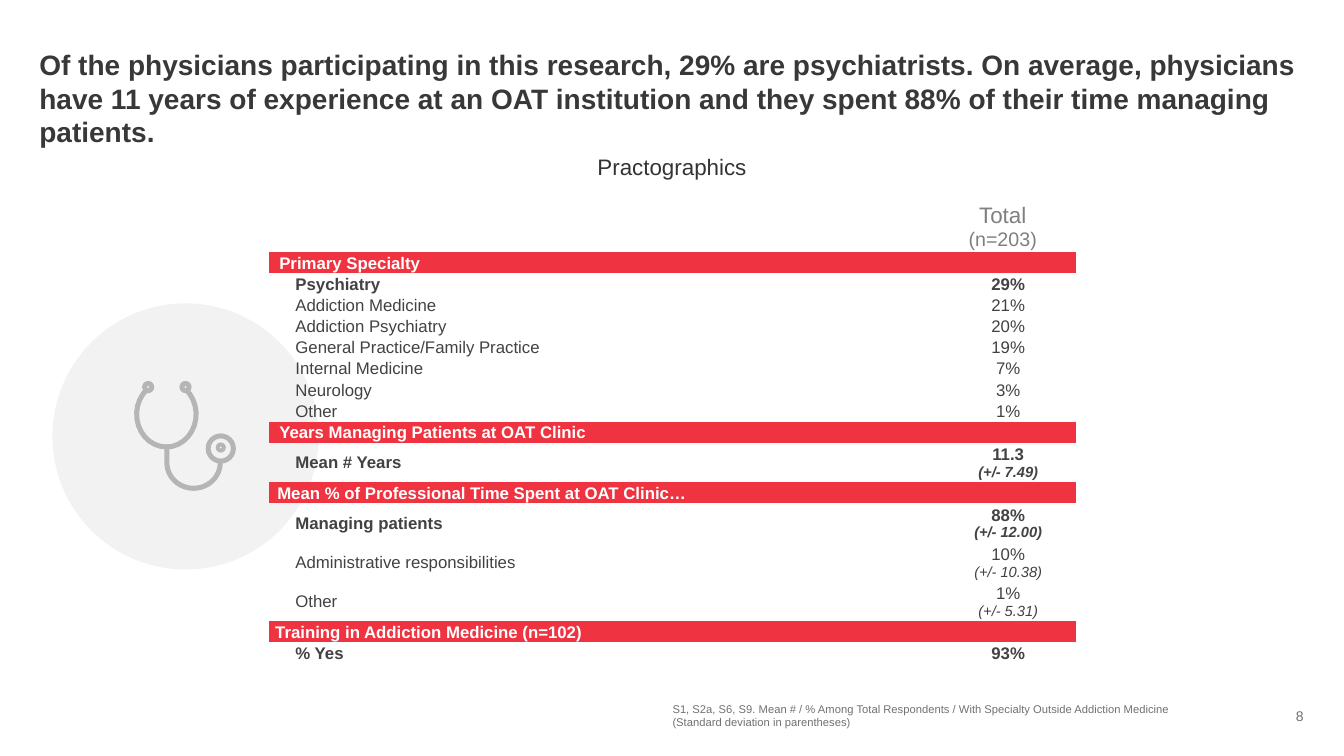
from collections import namedtuple
from dataclasses import dataclass
from math import cos, radians, sin

from lxml.etree import SubElement
from pptx import Presentation
from pptx.dml.color import RGBColor
from pptx.enum.shapes import MSO_SHAPE
from pptx.enum.text import MSO_ANCHOR, MSO_AUTO_SIZE, PP_ALIGN
from pptx.oxml.ns import qn
from pptx.util import Inches, Pt

Box = namedtuple("Box", "left top width height")
Section = namedtuple("Section", "heading inset rows")
Row = namedtuple("Row", "label value deviation bold")


@dataclass(frozen=True)
class Theme:
    font: str = "Arial"
    title: str = "383838"
    subtitle: str = "333333"
    muted: str = "717171"
    header: str = "7F7F7F"
    body: str = "424242"
    white: str = "FFFFFF"
    band: str = "EF3340"
    disc: str = "F2F2F2"
    icon: str = "B5B5B5"
    title_size: float = 20
    subtitle_size: float = 16
    count_size: float = 14
    body_size: float = 12
    deviation_size: float = 10.5
    page_size: float = 10
    note_size: float = 8


THEME = Theme()
NO_TABLE_STYLE = "{2D5ABB26-0587-4C30-8999-92F81FD0307C}"
COLUMN_WIDTHS = (6.55, 0.11, 1.34)
HEADER_HEIGHT, ROW_HEIGHT, TALL_HEIGHT = 0.51, 0.21, 0.39

TITLE = (
    "Of the physicians participating in this research, 29% are psychiatrists. "
    "On average, physicians have 11 years of experience at an OAT institution "
    "and they spent 88% of their time managing patients."
)
NOTE = (
    "S1, S2a, S6, S9. Mean # / % Among Total Respondents / With Specialty Outside Addiction Medicine",
    "(Standard deviation in parentheses)",
)
SECTIONS = (
    Section("Primary Specialty", 0.1, (
        Row("Psychiatry", "29%", None, True),
        Row("Addiction Medicine", "21%", None, False),
        Row("Addiction Psychiatry", "20%", None, False),
        Row("General Practice/Family Practice", "19%", None, False),
        Row("Internal Medicine", "7%", None, False),
        Row("Neurology", "3%", None, False),
        Row("Other", "1%", None, False),
    )),
    Section("Years Managing Patients at OAT Clinic", 0.1, (
        Row("Mean # Years", "11.3", "(+/- 7.49)", True),
    )),
    Section("Mean % of Professional Time Spent at OAT Clinic…", 0.08, (
        Row("Managing patients", "88%", "(+/- 12.00)", True),
        Row("Administrative responsibilities", "10%", "(+/- 10.38)", False),
        Row("Other", "1%", "(+/- 5.31)", False),
    )),
    Section("Training in Addiction Medicine (n=102)", 0.06, (
        Row("% Yes", "93%", None, True),
    )),
)


def add_run(paragraph, text, size, color, bold=False, italic=False):
    run = paragraph.add_run()
    run.text = text
    run.font.name = THEME.font
    run.font.size = Pt(size)
    run.font.color.rgb = RGBColor.from_string(color)
    run.font.bold = bold
    run.font.italic = italic


def clear_margins(frame):
    frame.margin_left = frame.margin_right = frame.margin_top = frame.margin_bottom = 0


def add_title(slide, box):
    title = slide.shapes.title
    title.left, title.top, title.width, title.height = map(Inches, box)
    frame = title.text_frame
    clear_margins(frame)
    frame.word_wrap = True
    frame.auto_size = MSO_AUTO_SIZE.NONE
    frame.vertical_anchor = MSO_ANCHOR.TOP
    paragraph = frame.paragraphs[0]
    paragraph.alignment = PP_ALIGN.LEFT
    paragraph.space_before = Pt(6)
    add_run(paragraph, TITLE, THEME.title_size, THEME.title, bold=True)


def add_text(slide, box, lines, size, color, alignment, inset=False):
    frame = slide.shapes.add_textbox(*map(Inches, box)).text_frame
    frame.word_wrap = True
    if not inset:
        clear_margins(frame)
        frame.vertical_anchor = MSO_ANCHOR.MIDDLE
    paragraph = frame.paragraphs[0]
    paragraph.alignment = alignment
    for index, line in enumerate(lines):
        if index:
            paragraph.add_line_break()
        add_run(paragraph, line, size, color)
    return paragraph


def format_cell(cell, inset=0.01, alignment=PP_ALIGN.LEFT, fill=None):
    cell.margin_left = Inches(inset)
    cell.margin_right = cell.margin_top = Inches(0.01)
    cell.margin_bottom = 0
    cell.vertical_anchor = MSO_ANCHOR.MIDDLE
    if fill:
        cell.fill.solid()
        cell.fill.fore_color.rgb = RGBColor.from_string(fill)
    else:
        cell.fill.background()
    paragraph = cell.text_frame.paragraphs[0]
    paragraph.alignment = alignment
    return paragraph


def add_practographics_table(slide, box):
    lines = [line for section in SECTIONS for line in (section, *section.rows)]
    frame = slide.shapes.add_table(len(lines) + 1, len(COLUMN_WIDTHS), *map(Inches, box))
    table = frame.table
    table.first_row = table.horz_banding = False
    frame._element.find(".//" + qn("a:tableStyleId")).text = NO_TABLE_STYLE
    for column, width in zip(table.columns, COLUMN_WIDTHS):
        column.width = Inches(width)
    for cell in table.iter_cells():
        paragraph = format_cell(cell)
        SubElement(paragraph._p, qn("a:endParaRPr"), sz=str(THEME.body_size * 100))

    table.rows[0].height = Inches(HEADER_HEIGHT)
    table.cell(0, 1).merge(table.cell(0, 2))
    header = format_cell(table.cell(0, 1), alignment=PP_ALIGN.CENTER)
    add_run(header, "Total", THEME.subtitle_size, THEME.header)
    header.add_line_break()
    add_run(header, "(n=203)", THEME.count_size, THEME.header)

    for index, line in enumerate(lines, 1):
        table.rows[index].height = Inches(ROW_HEIGHT)
        first = table.cell(index, 0)
        if isinstance(line, Section):
            first.merge(table.cell(index, 2))
            heading = format_cell(first, line.inset, fill=THEME.band)
            add_run(heading, line.heading, THEME.body_size, THEME.white, bold=True)
            continue
        label = format_cell(first, 0.26)
        add_run(label, line.label, THEME.body_size, THEME.body, line.bold)
        value = format_cell(table.cell(index, 2), alignment=PP_ALIGN.CENTER)
        add_run(value, line.value, THEME.body_size, THEME.body, line.bold)
        if line.deviation:
            table.rows[index].height = Inches(TALL_HEIGHT)
            value.add_line_break()
            add_run(value, line.deviation, THEME.deviation_size, THEME.body, line.bold, True)


def fill_shape(shape, color):
    shape.shadow.inherit = False
    shape.fill.solid()
    shape.fill.fore_color.rgb = RGBColor.from_string(color)
    shape.line.fill.background()


def arc(x, y, radius_x, radius_y, start, end, steps=24):
    angles = [radians(start + (end - start) * step / steps) for step in range(steps + 1)]
    return [(x + radius_x * cos(angle), y + radius_y * sin(angle)) for angle in angles]


def add_outline(shapes, box, contours):
    contours = [[(Inches(box.left + x), Inches(box.top + y)) for x, y in contour]
                for contour in contours]
    builder = shapes.build_freeform(*contours[0][0])
    builder.add_line_segments(contours[0][1:], close=True)
    for contour in contours[1:]:
        builder.move_to(*contour[0])
        builder.add_line_segments(contour[1:], close=True)
    fill_shape(builder.convert_to_shape(), THEME.icon)


def add_stethoscope(slide, box):
    shapes = slide.shapes.add_group_shape().shapes
    headset = arc(0.32, 0.33, 0.32, 0.35, -50, 230) + arc(0.32, 0.33, 0.27, 0.3, 230, -50)
    hose = ([(0.3, 0.63)] + arc(0.59, 0.81, 0.29, 0.28, 180, 0)
            + arc(0.59, 0.81, 0.24, 0.23, 0, 180) + [(0.35, 0.63)])
    add_outline(shapes, box, [headset])
    add_outline(shapes, box, [hose])
    rings = ((0.86, 0.67, 0.15, 0.1), (0.14, 0.06, 0.06, 0.01),
             (0.51, 0.06, 0.06, 0.01), (0.86, 0.66, 0.05, 0.01))
    for x, y, outer, inner in rings:
        add_outline(shapes, box, [arc(x, y, outer, outer, 0, 360),
                                  arc(x, y, inner, inner, 360, 0)])


def build_practographics_slide(presentation):
    slide = presentation.slides.add_slide(presentation.slide_layouts[5])
    add_title(slide, Box(0.39, 0.47, 12.54, 0.77))
    add_text(slide, Box(11.87, 6.99, 1.06, 0.22), ("8",),
             THEME.page_size, THEME.muted, PP_ALIGN.RIGHT)
    note = add_text(slide, Box(6.67, 6.99, 5.11, 0.22), NOTE,
                    THEME.note_size, THEME.muted, PP_ALIGN.LEFT)
    note.space_before = Pt(6)
    subtitle = add_text(slide, Box(0, 1.5, 13.33, 0.34), ("Practographics",),
                        THEME.subtitle_size, THEME.subtitle, PP_ALIGN.CENTER, inset=True)
    subtitle.line_spacing = 0.9
    disc = slide.shapes.add_shape(MSO_SHAPE.OVAL, *map(Inches, Box(0.52, 3.01, 2.64, 2.64)))
    fill_shape(disc, THEME.disc)
    add_practographics_table(slide, Box(2.67, 1.99, 8, 4.58))
    add_stethoscope(slide, Box(1.33, 3.78, 1.01, 1.09))


def main():
    presentation = Presentation()
    presentation.slide_width = Inches(13.33)
    presentation.slide_height = Inches(7.5)
    build_practographics_slide(presentation)
    presentation.save("out.pptx")


if __name__ == "__main__":
    main()
